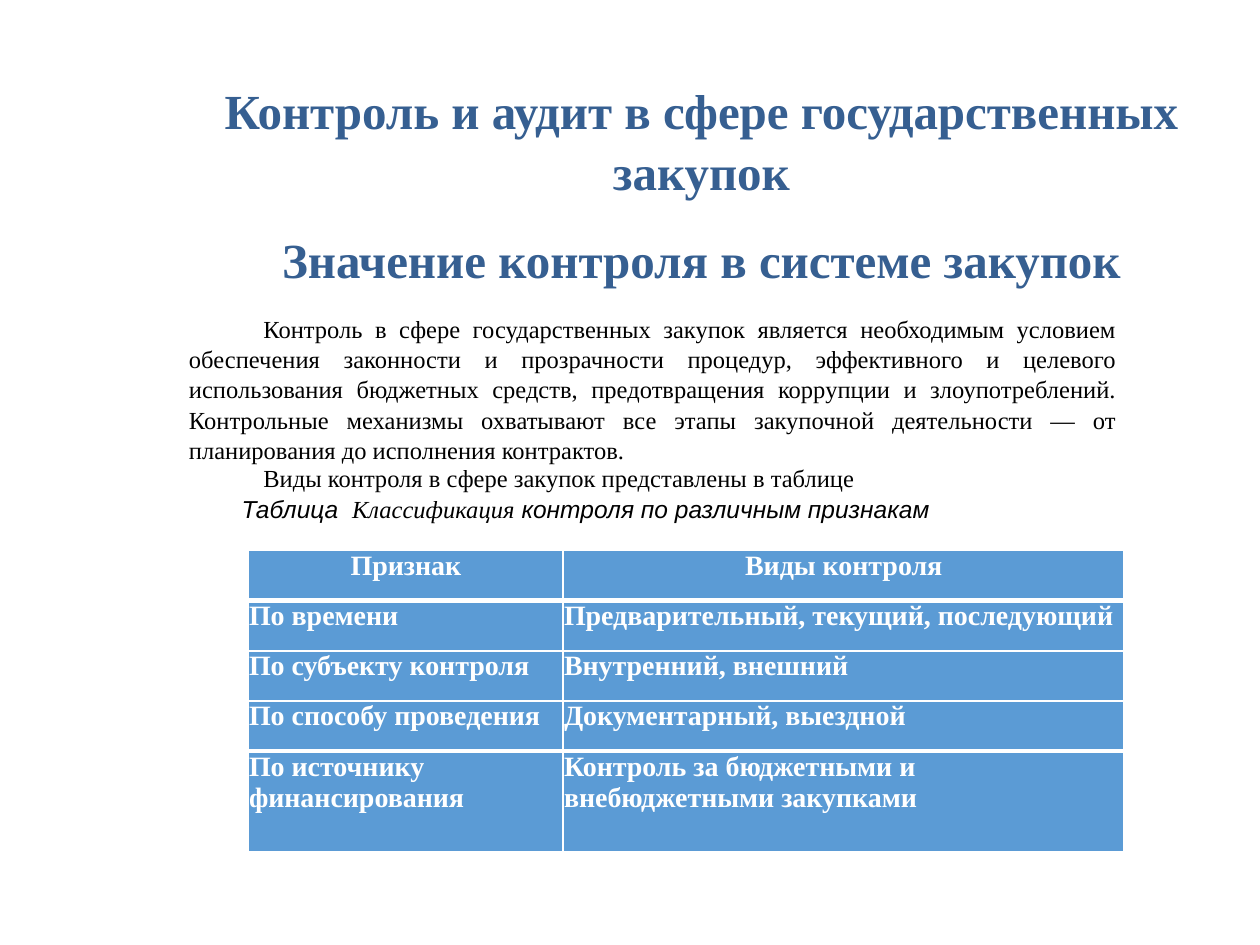
from dataclasses import dataclass

import pptx
import pptx.dml.color
import pptx.enum.text
import pptx.oxml
import pptx.oxml.ns
import pptx.util
from pptx.util import Cm, Pt

ALIGN = pptx.enum.text.PP_ALIGN
ANCHOR = pptx.enum.text.MSO_ANCHOR
RGB = pptx.dml.color.RGBColor


@dataclass(frozen=True)
class Theme:
    serif: str = "Times New Roman"
    sans: str = "Arial"
    heading: str = "365F91"
    ink: str = "000000"
    cell: str = "5B9BD5"
    white: str = "FFFFFF"
    heading_size: float = 28
    body_size: float = 14
    table_size: float = 16
    thin: float = 1
    thick: float = 3


THEME = Theme()


@dataclass(frozen=True)
class Style:
    size: float
    color: str
    font: str = THEME.serif
    bold: bool = False
    italic: bool = False


HEADING = Style(THEME.heading_size, THEME.heading, bold=True)
BODY = Style(THEME.body_size, THEME.ink)
CAPTION = Style(THEME.body_size, THEME.ink, THEME.sans, italic=True)
CAPTION_SERIF = Style(THEME.body_size, THEME.ink, italic=True)
TABLE = Style(THEME.table_size, THEME.white, bold=True)


@dataclass(frozen=True)
class Passage:
    """A paragraph; margins and first-line indent are in centimetres."""
    text: str
    style: Style
    align: ALIGN
    left: float = 0
    right: float = 0
    first_line: float = 0
    before: float = 0
    spacing: float | pptx.util.Length = 1.03


PASSAGES = (
    Passage("Контроль и аудит в сфере государственных закупок",
            HEADING, ALIGN.CENTER, left=2.21),
    Passage("Значение контроля в системе закупок",
            HEADING, ALIGN.CENTER, left=2.21, before=15.6),
    Passage("Контроль в сфере государственных закупок является необходимым "
            "условием обеспечения законности и прозрачности процедур, "
            "эффективного и целевого использования бюджетных средств, "
            "предотвращения коррупции и злоупотреблений. Контрольные механизмы "
            "охватывают все этапы закупочной деятельности — от планирования "
            "до исполнения контрактов.",
            BODY, ALIGN.JUSTIFY, left=1.5, right=1.25, first_line=1.5, before=14.2),
    Passage("Виды контроля в сфере закупок представлены в таблице",
            BODY, ALIGN.JUSTIFY, left=3, spacing=Pt(16)),
)

CAPTION_PARTS = (
    ("Таблица  ", CAPTION),
    ("Классификация", CAPTION_SERIF),
    (" контроля по различным признакам", CAPTION),
)

CONTROL_TYPES = (
    ("Признак", "Виды контроля"),
    ("По времени", "Предварительный, текущий, последующий"),
    ("По субъекту контроля", "Внутренний, внешний"),
    ("По способу проведения", "Документарный, выездной"),
    ("По источнику финансирования", "Контроль за бюджетными и внебюджетными закупками"),
)
COLUMN_WIDTHS = (6.35, 11.3)
ROW_HEIGHTS = (1.01, 1.01, 1.01, 1.01, 2.03)
THICK_RULES = (1, 4)  # rows that have a thick rule above them


def apply_style(font, style: Style) -> None:
    font.name = style.font
    font.size = Pt(style.size)
    font.bold = style.bold
    font.italic = style.italic
    font.color.rgb = RGB.from_string(style.color)


def add_frame(slide, left: float, top: float, width: float, height: float):
    frame = slide.shapes.add_textbox(Cm(left), Cm(top), Cm(width), Cm(height)).text_frame
    frame.word_wrap = True
    return frame


def write_passage(paragraph, passage: Passage) -> None:
    paragraph.text = passage.text
    paragraph.alignment = passage.align
    paragraph.line_spacing = passage.spacing
    paragraph.space_before = Pt(passage.before)
    properties = paragraph._p.get_or_add_pPr()
    for name, length in (("marL", passage.left), ("marR", passage.right),
                         ("indent", passage.first_line)):
        properties.set(name, str(int(Cm(length))))
    for run in paragraph.runs:
        apply_style(run.font, passage.style)


def add_border(cell, side: str, width: float) -> None:
    namespace = pptx.oxml.ns.nsdecls("a")
    cell._tc.get_or_add_tcPr().append(pptx.oxml.parse_xml(
        f'<a:ln{side} {namespace} w="{int(Pt(width))}"><a:solidFill>'
        f'<a:srgbClr val="{THEME.white}"/></a:solidFill></a:ln{side}>'))


def fill_cell(cell, text: str, row: int) -> None:
    cell.margin_left = cell.margin_right = cell.margin_top = cell.margin_bottom = 0
    above = THEME.thick if row in THICK_RULES else THEME.thin
    below = THEME.thick if row + 1 in THICK_RULES else THEME.thin
    for side, width in (("L", THEME.thin), ("R", THEME.thin), ("T", above), ("B", below)):
        add_border(cell, side, width)
    cell.fill.solid()
    cell.fill.fore_color.rgb = RGB.from_string(THEME.cell)
    align = ALIGN.CENTER if row == 0 else ALIGN.LEFT
    write_passage(cell.text_frame.paragraphs[0],
                  Passage(text, TABLE, align, left=0.02, spacing=1.0))


def add_control_table(slide) -> None:
    table = slide.shapes.add_table(
        len(ROW_HEIGHTS), len(COLUMN_WIDTHS), Cm(5), Cm(11.1),
        Cm(sum(COLUMN_WIDTHS)), Cm(sum(ROW_HEIGHTS))).table
    table.first_row = table.horz_banding = False
    for column, width in zip(table.columns, COLUMN_WIDTHS):
        column.width = Cm(width)
    for row, (height, texts) in enumerate(zip(ROW_HEIGHTS, CONTROL_TYPES)):
        table.rows[row].height = Cm(height)
        for column, text in enumerate(texts):
            fill_cell(table.cell(row, column), text, row)


def add_caption(slide) -> None:
    frame = add_frame(slide, 4.62, 9.83, 19.15, 0.86)
    frame.vertical_anchor = ANCHOR.MIDDLE
    paragraph = frame.paragraphs[0]
    paragraph.alignment = ALIGN.JUSTIFY
    for text, style in CAPTION_PARTS:
        run = paragraph.add_run()
        run.text = text
        apply_style(run.font, style)


def main() -> None:
    deck = pptx.Presentation()
    deck.slide_width, deck.slide_height = Cm(25.4), Cm(19.05)
    slide = deck.slides.add_slide(deck.slide_layouts[6])

    overview = add_frame(slide, 2.06, 1.47, 21.95, 9.04)
    for index, passage in enumerate(PASSAGES):
        paragraph = overview.add_paragraph() if index else overview.paragraphs[0]
        write_passage(paragraph, passage)

    add_control_table(slide)
    add_caption(slide)
    deck.save("out.pptx")


if __name__ == "__main__":
    main()
